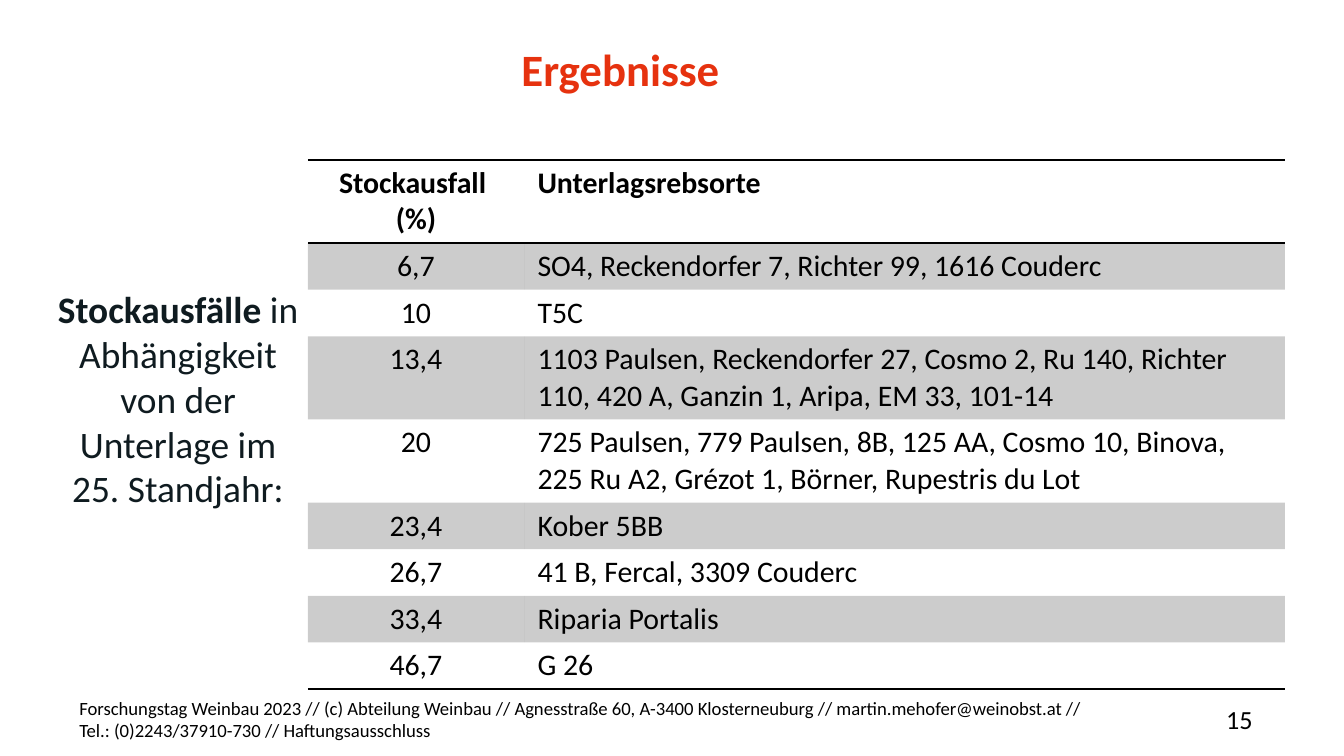
"""Build the results slide on vine losses by rootstock."""
from dataclasses import dataclass

from lxml.etree import SubElement
from pptx import Presentation
from pptx.dml.color import RGBColor
from pptx.enum.text import MSO_ANCHOR, MSO_AUTO_SIZE, PP_ALIGN
from pptx.oxml.ns import qn
from pptx.util import Inches, Pt


@dataclass(frozen=True)
class Theme:
    font: str = "Calibri"
    accent: str = "E6320F"
    body: str = "0F1B20"
    ink: str = "000000"
    band_opacity: int = 20
    title_size: int = 24
    body_size: int = 20
    table_size: int = 16
    number_size: int = 14
    footer_size: int = 10


theme = Theme()
WIDTH = 10
HEIGHT = WIDTH * 9 / 16
ROW, DOUBLE_ROW = 0.34, 0.61
COLUMNS = (1.61, 5.66)
NO_TABLE_STYLE = "{2D5ABB26-0587-4C30-8999-92F81FD0307C}"
FOOTER = (
    "Forschungstag Weinbau 2023 // (c) Abteilung Weinbau // Agnesstraße 60, "
    "A-3400 Klosterneuburg // martin.mehofer@weinobst.at // "
    "Tel.: (0)2243/37910-730 // Haftungsausschluss"
)
LOSSES = [
    ("Stockausfall \n(%)", "Unterlagsrebsorte"),
    ("6,7", "SO4, Reckendorfer 7, Richter 99, 1616 Couderc"),
    ("10", "T5C"),
    ("13,4", "1103 Paulsen, Reckendorfer 27, Cosmo 2, Ru 140, Richter 110, "
             "420 A, Ganzin 1, Aripa, EM 33, 101-14"),
    ("20", "725 Paulsen, 779 Paulsen, 8B, 125 AA, Cosmo 10, Binova, "
           "225 Ru A2, Grézot 1, Börner, Rupestris du Lot"),
    ("23,4", "Kober 5BB"),
    ("26,7", "41 B, Fercal, 3309 Couderc"),
    ("33,4", "Riparia Portalis"),
    ("46,7", "G 26"),
]
DOUBLE_ROWS = (0, 3, 4)


def style_text(frame, size, color, align=PP_ALIGN.LEFT, bold=False):
    for para in frame.paragraphs:
        para.alignment = align
        for span in para.runs:
            span.font.name = theme.font
            span.font.size = Pt(size)
            span.font.bold = bold
            span.font.color.rgb = RGBColor.from_string(color)


def prepare_box(box, left, top, width, height, anchor=MSO_ANCHOR.TOP, wrap=True):
    box.left, box.top = Inches(left), Inches(top)
    box.width, box.height = Inches(width), Inches(height)
    frame = box.text_frame
    frame.margin_left = frame.margin_right = 0
    frame.margin_top = frame.margin_bottom = 0
    frame.auto_size = MSO_AUTO_SIZE.NONE
    frame.vertical_anchor = anchor
    frame.word_wrap = wrap
    return frame


deck = Presentation()
deck.slide_width, deck.slide_height = Inches(WIDTH), Inches(HEIGHT)
page = deck.slides.add_slide(deck.slide_layouts[5])

title = prepare_box(page.shapes.title, 3.88, 0.29, 1.9, 0.52, wrap=False)
title.text = "Ergebnisse"
title.paragraphs[0].line_spacing = Pt(30)
style_text(title, theme.title_size, theme.accent, bold=True)

caption = prepare_box(page.shapes.add_textbox(0, 0, 0, 0), 0.4, 2.13, 1.85, 2.42)
para = caption.paragraphs[0]
para.line_spacing = Pt(24)
para.space_after = Pt(14.2)
for text in ("Stockausfälle", " in Abhängigkeit von der Unterlage im 25. Standjahr:"):
    para.add_run().text = text
style_text(caption, theme.body_size, theme.body, PP_ALIGN.CENTER)
para.runs[0].font.bold = True

for text, left, width, size, align in (
    (FOOTER, 0.59, 7.55, theme.footer_size, PP_ALIGN.LEFT),
    ("15", 8.43, 0.89, theme.number_size, PP_ALIGN.RIGHT),
):
    box = page.shapes.add_textbox(0, 0, 0, 0)
    frame = prepare_box(box, left, 5.24, width, 0.22, MSO_ANCHOR.MIDDLE)
    frame.text = text
    style_text(frame, size, theme.ink, align)

heights = [DOUBLE_ROW if row in DOUBLE_ROWS else ROW for row in range(len(LOSSES))]
table = page.shapes.add_table(
    len(LOSSES), len(COLUMNS), Inches(2.29), Inches(1.19),
    Inches(sum(COLUMNS)), Inches(sum(heights)),
).table
table._tbl.tblPr.find(qn("a:tableStyleId")).text = NO_TABLE_STYLE
for column, width in zip(table.columns, COLUMNS):
    column.width = Inches(width)

last = len(LOSSES) - 1
for row, (entries, height) in enumerate(zip(LOSSES, heights)):
    table.rows[row].height = Inches(height)
    edges = {0: ("a:lnT", "a:lnB"), last: ("a:lnB",)}.get(row, ())
    for column, text in enumerate(entries):
        cell = table.cell(row, column)
        cell.margin_left = cell.margin_right = Inches(0.1)
        cell.margin_top = cell.margin_bottom = Pt(2.7)
        cell.text_frame.text = text
        align = PP_ALIGN.LEFT if column else PP_ALIGN.CENTER
        style_text(cell.text_frame, theme.table_size, theme.ink, align, row == 0)
        properties = cell._tc.get_or_add_tcPr()
        for edge in edges:
            line = SubElement(properties, qn(edge), w=str(Pt(1)))
            fill = SubElement(line, qn("a:solidFill"))
            SubElement(fill, qn("a:srgbClr"), val=theme.ink)
        if row % 2:
            cell.fill.solid()
            cell.fill.fore_color.rgb = RGBColor.from_string(theme.ink)
            color = properties.find(".//" + qn("a:srgbClr"))
            SubElement(color, qn("a:alpha"), val=str(theme.band_opacity * 1000))
        else:
            cell.fill.background()

deck.save("out.pptx")
